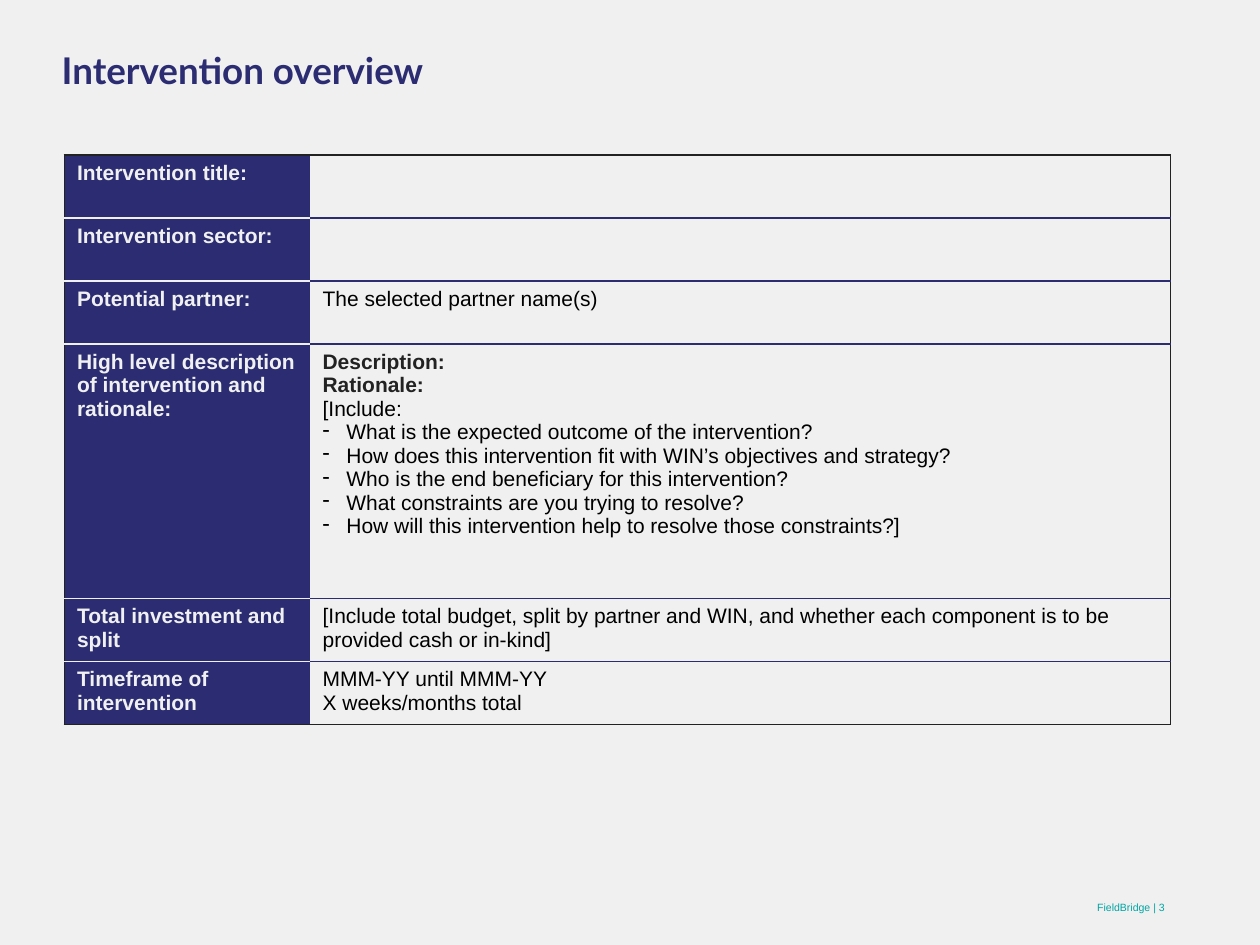
import dataclasses

import lxml.etree
import pptx
import pptx.dml.color
import pptx.enum.text
import pptx.oxml.ns
import pptx.util

Cm = pptx.util.Cm
Pt = pptx.util.Pt


@dataclasses.dataclass(frozen=True)
class Theme:
    background: str = "F0F0F0"
    navy: str = "2B2C71"
    dark: str = "222222"
    black: str = "000000"
    teal: str = "00A5A3"
    title_font: str = "Lato"
    body_font: str = "Arial"
    title_size: int = 21
    table_size: int = 12
    footer_size: int = 6
    border_width: int = 1


# Each row: label, height in cm, and (text, kind) paragraphs of the answer cell.
ROWS = [
    ("Intervention title:", 1.27, []),
    ("Intervention sector:", 1.27, []),
    ("Potential partner:", 1.27, [("The selected partner name(s)", "plain")]),
    ("High level description of intervention and rationale:", 5.13, [
        ("Description:", "heading"),
        ("Rationale:", "heading"),
        ("[Include:", "plain"),
        ("What is the expected outcome of the intervention?", "bullet"),
        ("How does this intervention fit with WIN’s objectives and strategy?", "bullet"),
        ("Who is the end beneficiary for this intervention?", "bullet"),
        ("What constraints are you trying to resolve?", "bullet"),
        ("How will this intervention help to resolve those constraints?]", "bullet"),
    ]),
    ("Total investment and split", 1.17, [
        ("[Include total budget, split by partner and WIN, and whether each "
         "component is to be provided cash or in-kind]", "plain"),
    ]),
    ("Timeframe of intervention", 1.27, [
        ("MMM-YY until MMM-YY", "plain"),
        ("X weeks/months total", "plain"),
    ]),
]
COLUMN_WIDTHS = (4.95, 17.35)


def rgb(colour):
    return pptx.dml.color.RGBColor.from_string(colour)


def add_xml(parent, tag, **attributes):
    return lxml.etree.SubElement(parent, pptx.oxml.ns.qn(tag), attributes)


class SlideBuilder:
    """Holds the theme and the slide that elements are added to."""

    def __init__(self, presentation, theme):
        self.theme = theme
        self.slide = presentation.slides.add_slide(presentation.slide_layouts[5])
        fill = self.slide.background.fill
        fill.solid()
        fill.fore_color.rgb = rgb(theme.background)

    def add_text(self, paragraph, text, colour, **font_format):
        run = paragraph.add_run()
        run.text = text
        run.font.color.rgb = rgb(colour)
        for name, value in font_format.items():
            setattr(run.font, name, value)

    def place(self, shape, left, top, width, height):
        frame = {"left": left, "top": top, "width": width, "height": height}
        for name, value in frame.items():
            setattr(shape, name, Cm(value))

    def title(self, text, *frame):
        shape = self.slide.shapes.title
        self.place(shape, *frame)
        shape.text_frame.vertical_anchor = pptx.enum.text.MSO_ANCHOR.TOP
        paragraph = shape.text_frame.paragraphs[0]
        paragraph.alignment = pptx.enum.text.PP_ALIGN.LEFT
        self.add_text(paragraph, text, self.theme.navy, name=self.theme.title_font,
                      size=Pt(self.theme.title_size), bold=True)

    def footer(self, text, *frame):
        shape = self.slide.shapes.add_textbox(*map(Cm, frame))
        shape.text_frame.word_wrap = True
        shape.text_frame.vertical_anchor = pptx.enum.text.MSO_ANCHOR.MIDDLE
        paragraph = shape.text_frame.paragraphs[0]
        paragraph.alignment = pptx.enum.text.PP_ALIGN.RIGHT
        self.add_text(paragraph, text, self.theme.teal, name=self.theme.body_font,
                      size=Pt(self.theme.footer_size))

    def bullet(self, paragraph):
        properties = paragraph._p.get_or_add_pPr()
        indent = Cm(0.48)
        properties.set("marL", str(indent))
        properties.set("indent", str(-indent))
        colour = add_xml(properties, "a:buClr")
        add_xml(colour, "a:srgbClr", val=self.theme.black)
        add_xml(properties, "a:buChar", char="-")

    def borders(self, cell, **edges):
        """Draw the given edges (L, R, T, B) and clear the others."""
        properties = cell._tc.get_or_add_tcPr()
        for edge in "LRTB":
            line = add_xml(properties, f"a:ln{edge}",
                           w=str(Pt(self.theme.border_width)))
            if edge in edges:
                fill = add_xml(line, "a:solidFill")
                add_xml(fill, "a:srgbClr", val=edges[edge])
            else:
                add_xml(line, "a:noFill")

    def cell(self, cell, paragraphs, fill, edges):
        theme = self.theme
        styles = {
            "label": (theme.background, True),
            "heading": (theme.dark, True),
            "plain": (theme.black, False),
            "bullet": (theme.black, False),
        }
        self.borders(cell, **edges)
        cell.fill.solid()
        cell.fill.fore_color.rgb = rgb(fill)
        for index, (text, kind) in enumerate(paragraphs):
            frame = cell.text_frame
            paragraph = frame.add_paragraph() if index else frame.paragraphs[0]
            colour, bold = styles[kind]
            self.add_text(paragraph, text, colour, bold=bold, name=theme.body_font,
                          size=Pt(theme.table_size))
            if kind == "bullet":
                self.bullet(paragraph)

    def table(self, rows, column_widths, left, top):
        theme = self.theme
        height = sum(row[1] for row in rows)
        table = self.slide.shapes.add_table(
            len(rows), len(column_widths), Cm(left), Cm(top),
            Cm(sum(column_widths)), Cm(height)).table
        table.first_row = table.horz_banding = False
        for column, width in zip(table.columns, column_widths):
            column.width = Cm(width)
        last = len(rows) - 1
        for index, (label, row_height, answer) in enumerate(rows):
            table.rows[index].height = Cm(row_height)

            def edges(side, inner):
                return {side: theme.dark,
                        "T": inner if index else theme.dark,
                        "B": inner if index < last else theme.dark}

            self.cell(table.cell(index, 0), [(label, "label")], theme.navy,
                      edges("L", theme.background))
            self.cell(table.cell(index, 1), answer, theme.background,
                      edges("R", theme.navy))


def main():
    presentation = pptx.Presentation()
    presentation.slide_width = Cm(25.4)
    presentation.slide_height = Cm(19.05)
    builder = SlideBuilder(presentation, Theme())
    builder.title("Intervention overview", 0.99, 0.84, 22.53, 1.47)
    builder.footer("FieldBridge | 3", 17.81, 17.78, 5.92, 1.02)
    builder.table(ROWS, COLUMN_WIDTHS, 1.3, 3.12)
    presentation.save("out.pptx")


if __name__ == "__main__":
    main()
